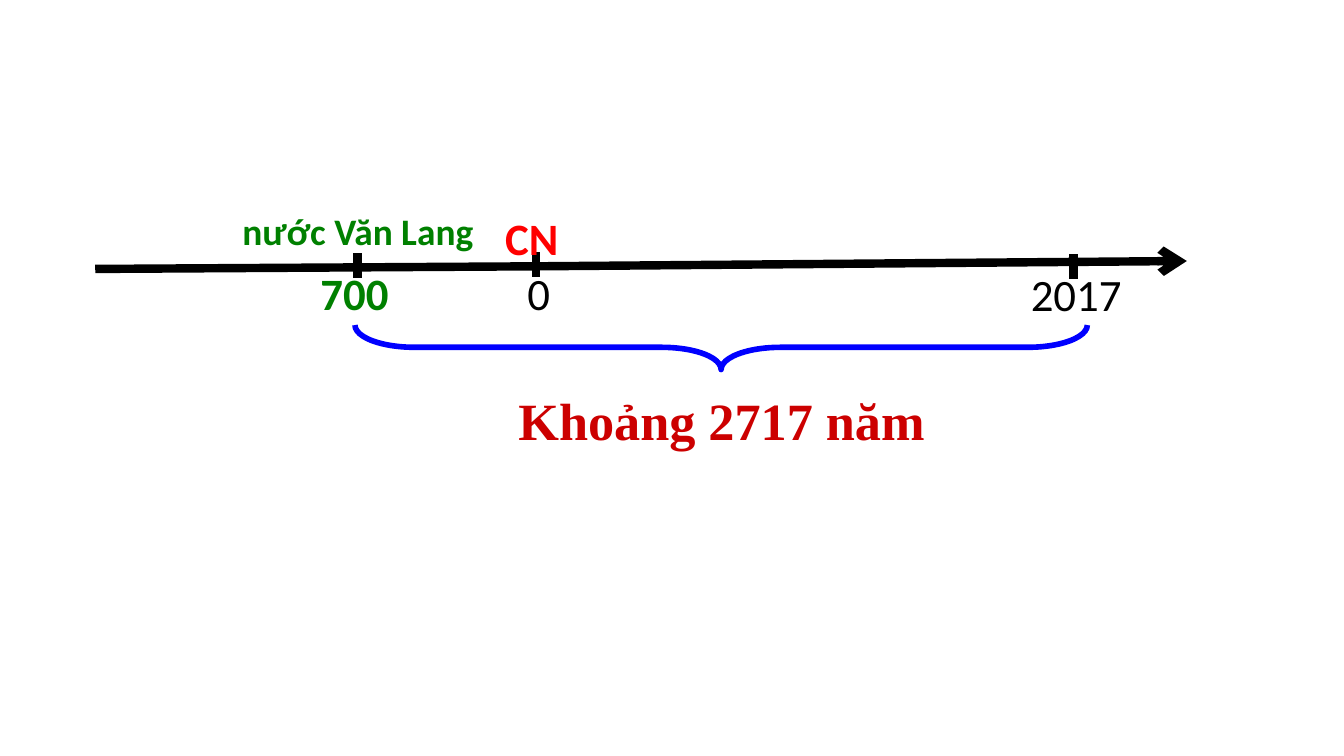
from dataclasses import dataclass
from lxml.etree import SubElement
from pptx import Presentation
from pptx.dml.color import RGBColor
from pptx.enum.shapes import MSO_CONNECTOR, MSO_SHAPE
from pptx.enum.text import MSO_ANCHOR, PP_ALIGN
from pptx.oxml.ns import qn
from pptx.util import Cm, Pt


@dataclass(frozen=True)
class Theme:
    black: RGBColor = RGBColor(0, 0, 0)
    red: RGBColor = RGBColor(255, 0, 0)
    green: RGBColor = RGBColor(0, 128, 0)
    blue: RGBColor = RGBColor(0, 0, 255)
    crimson: RGBColor = RGBColor(204, 0, 0)
    label_font: str = "Calibri"
    span_font: str = "Times New Roman"
    event_size: Pt = Pt(20)
    label_size: Pt = Pt(24)
    span_size: Pt = Pt(28)
    axis_width: Pt = Pt(4.5)
    brace_width: Pt = Pt(3)


theme = Theme()


def add_text(page, text, left, top, width, height, font, size, color, bold):
    box = page.shapes.add_textbox(Cm(left), Cm(top), Cm(width), Cm(height))
    box.text_frame.word_wrap = True
    para = box.text_frame.paragraphs[0]
    para.text = text
    para.font.name = font
    para.font.size = size
    para.font.bold = bold
    para.font.color.rgb = color
    return box.text_frame


def add_line(page, start_x, start_y, end_x, end_y):
    connector = page.shapes.add_connector(
        MSO_CONNECTOR.STRAIGHT, Cm(start_x), Cm(start_y), Cm(end_x), Cm(end_y))
    connector.line.color.rgb = theme.black
    connector.line.width = theme.axis_width
    SubElement(connector._element.spPr, qn("a:effectLst"))
    return connector


deck = Presentation()
deck.slide_width, deck.slide_height = Cm(25.4), Cm(14.28)
page = deck.slides.add_slide(deck.slide_layouts[6])

axis_future = add_line(page, 10.16, 5.03, 22.43, 4.93)
SubElement(axis_future.line._get_or_add_ln(), qn("a:tailEnd"), type="arrow")
add_line(page, 10.16, 5.03, 1.8, 5.08)

for tick_x, tick_top in ((6.76, 4.78), (10.13, 4.76), (20.29, 4.8)):
    add_line(page, tick_x, tick_top, tick_x, tick_top + 0.47)

labels = (
    ("2017", 18.75, 5.16, 3.18, theme.label_size, theme.black, False),
    ("CN", 8.46, 4.09, 3.18, theme.label_size, theme.red, True),
    ("0", 8.59, 5.13, 3.18, theme.label_size, theme.black, False),
    ("700", 5.11, 5.13, 3.18, theme.label_size, theme.green, True),
    ("nước Văn Lang", 4.01, 3.96, 5.51, theme.event_size, theme.green, True),
)
for text, left, top, width, size, color, bold in labels:
    frame = add_text(page, text, left, top, width, 0.79,
                     theme.label_font, size, color, bold)
    frame.vertical_anchor = MSO_ANCHOR.MIDDLE
    frame.paragraphs[0].alignment = PP_ALIGN.CENTER

brace = page.shapes.add_shape(
    MSO_SHAPE.LEFT_BRACE, Cm(13.21), Cm(-0.36), Cm(0.84), Cm(13.84))
brace.rotation = 270
brace.adjustments[0] = 1.34
brace.shadow.inherit = False
brace.fill.background()
brace.line.color.rgb = theme.blue
brace.line.width = theme.brace_width

add_text(page, "Khoảng 2717 năm", 9.55, 7.21, 11.35, 1.45,
         theme.span_font, theme.span_size, theme.crimson, True)

deck.save("out.pptx")
